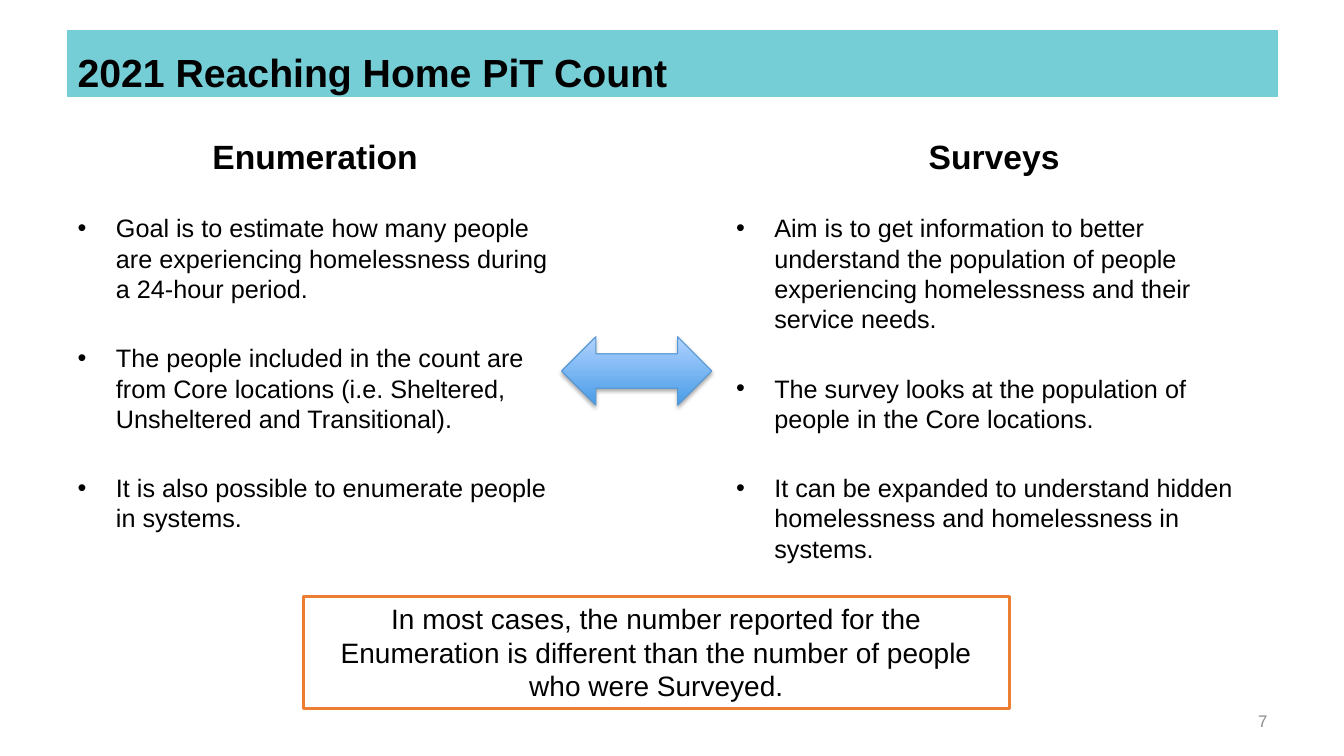
from lxml import etree
from pptx import Presentation
from pptx.dml.color import RGBColor
from pptx.enum.shapes import MSO_SHAPE
from pptx.enum.text import MSO_ANCHOR, MSO_AUTO_SIZE, PP_ALIGN
from pptx.oxml.ns import qn
from pptx.util import Inches, Pt

LEFT, CENTER, RIGHT = PP_ALIGN.LEFT, PP_ALIGN.CENTER, PP_ALIGN.RIGHT
TOP, MIDDLE, BOTTOM = MSO_ANCHOR.TOP, MSO_ANCHOR.MIDDLE, MSO_ANCHOR.BOTTOM
NO_AUTOFIT = MSO_AUTO_SIZE.NONE
DOUBLE_ARROW, RECTANGLE = MSO_SHAPE.LEFT_RIGHT_ARROW, MSO_SHAPE.RECTANGLE
COMPARISON_LAYOUT = 4
COLORS = {
    "text": "000000",
    "white": "FFFFFF",
    "banner": "75CED6",
    "page": "8C8C8C",
    "callout": "ED7D31",
    "arrow_dark": "499CE7",
    "arrow_light": "B0D2FF",
    "arrow_line": "5698D3",
}
COLUMNS = [
    {
        "heading": "Enumeration",
        "heading_box": (0.67, 1.29, 4.91, 0.51),
        "points": [
            "Goal is to estimate how many people are experiencing homelessness during a 24-hour period.",
            "The people included in the count are from Core locations (i.e. Sheltered, Unsheltered and Transitional).",
            "It is also possible to enumerate people in systems.",
        ],
        "points_box": (0.67, 2.06, 5, 3.61),
    },
    {
        "heading": "Surveys",
        "heading_box": (7.06, 1.29, 5.6, 0.51),
        "points": [
            "Aim is to get information to better understand the population of people experiencing homelessness and their service needs.",
            "The survey looks at the population of people in the Core locations.",
            "It can be expanded to understand hidden homelessness and homelessness in systems.",
        ],
        "points_box": (7.2, 2.06, 5.47, 3.61),
    },
]


def color(name):
    """Return the named colour."""
    return RGBColor.from_string(COLORS[name])


def place(shape, box):
    """Move and size a shape to a box in inches."""
    shape.left, shape.top, shape.width, shape.height = map(Inches, box)


def paint(shape, fill, line, width):
    """Give a shape a plain fill and outline without a shadow."""
    shape.fill.solid()
    shape.fill.fore_color.rgb = color(fill)
    outline(shape, line, width)


def outline(shape, line, width):
    """Set the outline and clear the shadow."""
    shape.line.color.rgb = color(line)
    shape.line.width = Pt(width)
    shape.shadow.inherit = False


def add_bullet(paragraph):
    """Give a paragraph a hanging round bullet."""
    properties = paragraph._p.get_or_add_pPr()
    properties.set("marL", str(Inches(0.38)))
    properties.set("indent", str(-Inches(0.38)))
    etree.SubElement(properties, qn("a:buChar"), char="•")


def write(shape, paragraphs, size=18, bold=False, ink="text", align=LEFT,
          anchor=TOP, gap=0, bullets=False, line_spacing=None):
    """Write formatted paragraphs into a shape."""
    frame = shape.text_frame
    frame.word_wrap = True
    frame.auto_size = NO_AUTOFIT
    frame.vertical_anchor = anchor
    for index, text in enumerate(paragraphs):
        paragraph = frame.add_paragraph() if index else frame.paragraphs[0]
        paragraph.text = text
        if bullets:
            add_bullet(paragraph)
        paragraph.alignment = align
        paragraph.space_before = Pt(gap if index else 0)
        if line_spacing:
            paragraph.line_spacing = Pt(line_spacing)
        font = paragraph.font
        font.name, font.size, font.bold = "Arial", Pt(size), bold
        font.color.rgb = color(ink)


def fill_column(heading, points, column):
    """Fill one side of the comparison."""
    place(heading, column["heading_box"])
    write(heading, [column["heading"]], size=24, bold=True, align=CENTER, anchor=BOTTOM)
    place(points, column["points_box"])
    write(points, column["points"], gap=28, bullets=True)


def add_arrow(slide, box):
    """Add the shaded two-way arrow between the columns."""
    arrow = slide.shapes.add_shape(DOUBLE_ARROW, *map(Inches, box))
    arrow.fill.gradient()
    arrow.fill.gradient_angle = 90
    for stop, name in zip(arrow.fill.gradient_stops, ("arrow_dark", "arrow_light")):
        stop.color.rgb = color(name)
    outline(arrow, "arrow_line", 0.75)
    effects = arrow._element.spPr.find(qn("a:effectLst"))
    shadow = etree.SubElement(effects, qn("a:outerShdw"), blurRad=str(Pt(3.1)),
                              dist=str(Pt(1.8)), dir="5400000", rotWithShape="0")
    shade = etree.SubElement(shadow, qn("a:srgbClr"), val=COLORS["text"])
    etree.SubElement(shade, qn("a:alpha"), val="35000")


def add_callout(slide, text, box):
    """Add the outlined conclusion."""
    callout = slide.shapes.add_shape(RECTANGLE, *map(Inches, box))
    paint(callout, "white", "callout", 2)
    write(callout, [text], size=20, align=CENTER)


def add_page_number(slide, number, box):
    """Add the page number."""
    page = slide.shapes.add_textbox(*map(Inches, box))
    write(page, [number], size=12, ink="page", align=RIGHT, anchor=MIDDLE)


def main():
    """Build and save the slide."""
    presentation = Presentation()
    presentation.slide_width, presentation.slide_height = Inches(13.33), Inches(7.5)
    slide = presentation.slides.add_slide(presentation.slide_layouts[COMPARISON_LAYOUT])
    title, *sides = slide.placeholders
    place(title, (0.67, 0.3, 12, 0.66))
    paint(title, "banner", "banner", 0.75)
    write(title, ["2021 Reaching Home PiT Count"], size=28, bold=True, line_spacing=43.2)
    for heading, points, column in zip(sides[::2], sides[1::2], COLUMNS):
        fill_column(heading, points, column)
    add_page_number(slide, "7", (9.56, 6.95, 3.11, 0.4))
    add_arrow(slide, (5.57, 3.34, 1.49, 0.68))
    add_callout(slide, "In most cases, the number reported for the Enumeration is different "
                "than the number of people who were Surveyed.", (3.01, 5.92, 7, 1.11))
    presentation.save("out.pptx")


if __name__ == "__main__":
    main()
